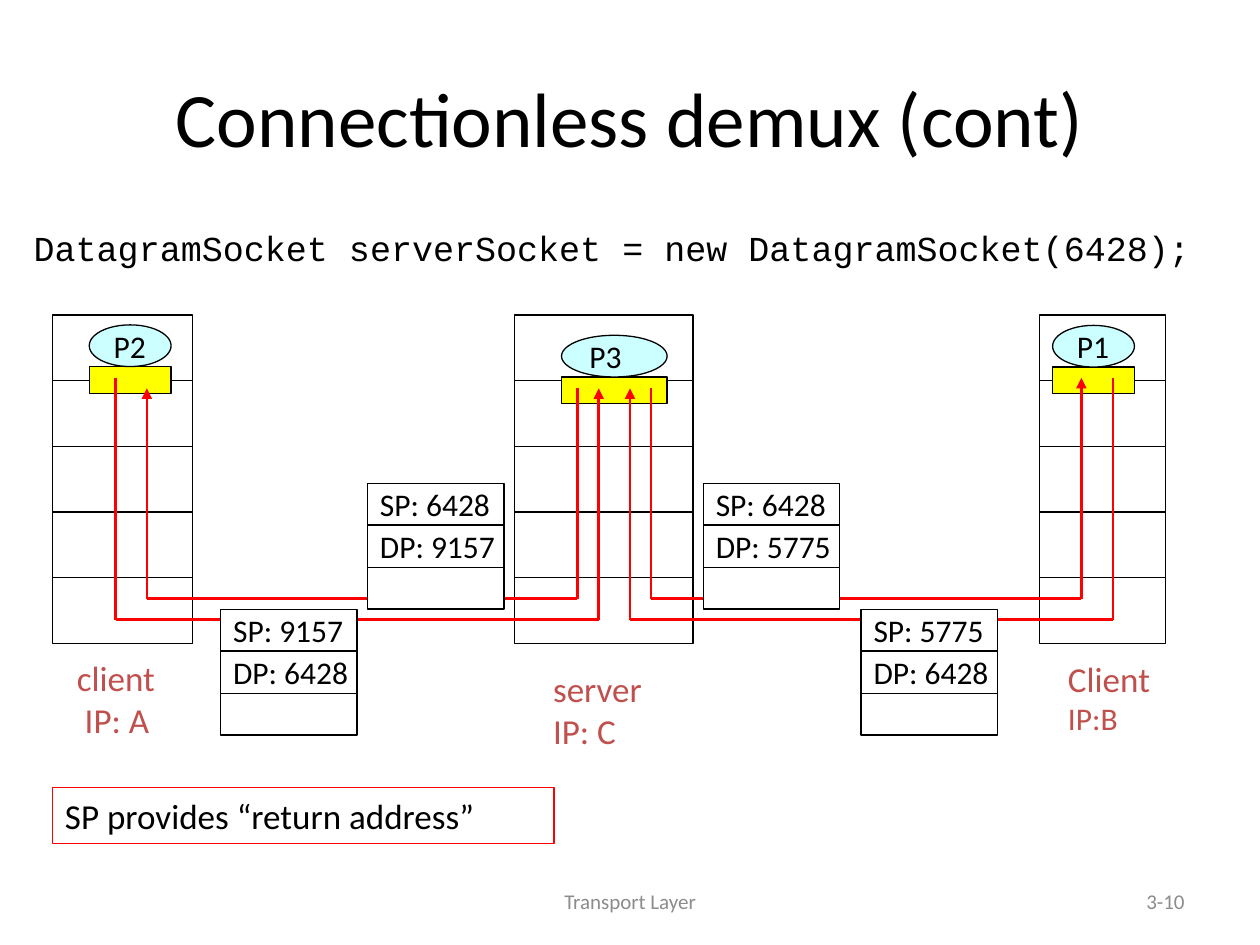
from dataclasses import dataclass
from itertools import pairwise

from lxml import etree
from pptx import Presentation
from pptx.dml.color import RGBColor
from pptx.enum.shapes import MSO_CONNECTOR, MSO_SHAPE
from pptx.enum.text import MSO_ANCHOR, PP_ALIGN
from pptx.oxml.ns import qn
from pptx.util import Cm, Pt

RECTANGLE = MSO_SHAPE.RECTANGLE
OVAL = MSO_SHAPE.OVAL
STRAIGHT = MSO_CONNECTOR.STRAIGHT
TOP = MSO_ANCHOR.TOP
MIDDLE = MSO_ANCHOR.MIDDLE
LEFT = PP_ALIGN.LEFT
CENTER = PP_ALIGN.CENTER
RIGHT = PP_ALIGN.RIGHT


@dataclass(frozen=True)
class Theme:
    font: str = "Calibri"
    code_font: str = "Courier New"
    ink: str = "000000"
    paper: str = "FFFFFF"
    process: str = "CCFFFF"
    socket: str = "FFFF00"
    route: str = "FF0000"
    label: str = "C0504D"
    muted: str = "8C8C8C"
    title_size: float = 44
    body_size: float = 20
    small_size: float = 18
    footer_size: float = 12
    outline: float = 0.75
    route_width: float = 1.5


THEME = Theme()


def rgb(value):
    return RGBColor.from_string(value)


def write(shape, lines, color=THEME.ink, font=THEME.font, align=LEFT, anchor=TOP):
    frame = shape.text_frame
    frame.word_wrap = True
    frame.vertical_anchor = anchor
    for index, (text, size) in enumerate(lines):
        paragraph = frame.paragraphs[0] if index == 0 else frame.add_paragraph()
        paragraph.alignment = align
        run = paragraph.add_run()
        run.text = text
        run.font.name = font
        run.font.size = Pt(size)
        run.font.color.rgb = rgb(color)
    return frame


def add_text(slide, box, lines, **style):
    return write(slide.shapes.add_textbox(*map(Cm, box)), lines, **style)


def add_outlined(slide, kind, box, fill=None, line=THEME.ink):
    shape = slide.shapes.add_shape(kind, *map(Cm, box))
    shape.shadow.inherit = False
    if fill:
        shape.fill.solid()
        shape.fill.fore_color.rgb = rgb(fill)
    else:
        shape.fill.background()
    shape.line.color.rgb = rgb(line)
    shape.line.width = Pt(THEME.outline)
    return shape


def write_compact(shape, text):
    frame = write(shape, [(text, THEME.small_size)], anchor=MIDDLE)
    frame.margin_right = 0


def add_host(slide, box, process, process_box, label, label_box):
    left, top, width, height = box
    layers = 5
    layer_height = height / layers
    for layer in range(layers):
        layer_box = (left, top + layer * layer_height, width, layer_height)
        add_outlined(slide, RECTANGLE, layer_box, THEME.paper)

    offset_x, offset_y, process_width = process_box
    oval_height, socket_height = 0.84, 0.54
    x, y = left + offset_x, top + offset_y
    socket_box = (x, y + oval_height, process_width, socket_height)
    add_outlined(slide, RECTANGLE, socket_box, THEME.socket)
    oval = add_outlined(slide, OVAL, (x, y, process_width, oval_height), THEME.process)
    write_compact(oval, process)

    label_x, label_y, label_width = label_box
    add_text(slide, (left + label_x, top + height + label_y, label_width, 1.95),
             label, color=THEME.label)


def add_route(slide, start, end, lane):
    (start_x, start_y), (end_x, end_y) = start, end
    points = [(start_x, start_y), (start_x, lane), (end_x, lane), (end_x, end_y)]
    for begin, finish in pairwise(points):
        connector = slide.shapes.add_connector(STRAIGHT, *map(Cm, begin + finish))
        connector.line.color.rgb = rgb(THEME.route)
        connector.line.width = Pt(THEME.route_width)
        properties = connector._element.spPr
        etree.SubElement(properties, qn("a:effectLst"))
        if finish == points[-1]:
            etree.SubElement(properties.find(qn("a:ln")), qn("a:tailEnd"), type="triangle")


def add_packet(slide, box, source_port, destination_port):
    left, top, width, height = box
    fields = (f"SP: {source_port}", f"DP: {destination_port}", "")
    field_height = height / len(fields)
    for row, field in enumerate(fields):
        field_box = (left, top + row * field_height, width, field_height)
        cell = add_outlined(slide, RECTANGLE, field_box, THEME.paper)
        if field:
            write_compact(cell, field)


def add_heading(slide, box):
    left, top, width, height = box
    add_text(slide, box, [("Connectionless demux (cont)", THEME.title_size)],
             align=CENTER, anchor=MIDDLE)
    code = "DatagramSocket serverSocket = new DatagramSocket(6428);"
    frame = add_text(slide, (left - 0.84, top + height + 0.51, width + 1.27, 1.7),
                     [(code, THEME.body_size)], font=THEME.code_font)
    frame.paragraphs[0].space_before = Pt(4)


def add_diagram(slide, box):
    left, top, width, height = box
    size = THEME.body_size
    add_host(slide, (left, top, 2.82, height), "P2", (0.74, 0.2, 1.65),
             [("client", size), (" IP: A", size)], (0.24, 0.14, 2.41))
    add_host(slide, (left + width - 2.54, top, 2.54, height), "P1", (0.26, 0.21, 1.65),
             [("Client", size), ("IP:B", THEME.small_size)], (0.32, 0.16, 2.41))
    add_host(slide, (left + 9.31, top, 3.6, height), "P3", (0.95, 0.41, 2.13),
             [("server", size), ("IP: C", size)], (0.53, 0.37, 2.67))

    reply_lane, request_lane = top + 5.72, top + 6.14
    client_y, server_y = top + 1.27, top + 1.48
    routes = [
        ((1.27, client_y), (11.01, server_y), request_lane),
        ((10.58, server_y), (1.9, server_y), reply_lane),
        ((21.38, client_y), (11.64, server_y), request_lane),
        ((12.06, server_y), (20.74, client_y), reply_lane),
    ]
    for (start_x, start_y), (end_x, end_y), lane in routes:
        add_route(slide, (left + start_x, start_y), (left + end_x, end_y), lane)

    reply_top, request_top = top + 3.39, top + 5.93
    packets = [
        (6.35, reply_top, 6428, 9157),
        (3.39, request_top, 9157, 6428),
        (13.12, reply_top, 6428, 5775),
        (16.3, request_top, 5775, 6428),
    ]
    for x, y, source_port, destination_port in packets:
        add_packet(slide, (left + x, y, 2.75, 2.54), source_port, destination_port)


def add_note(slide, box):
    note = add_outlined(slide, RECTANGLE, box, line=THEME.route)
    write(note, [("SP provides “return address”", THEME.body_size)], anchor=MIDDLE)


def add_footer(slide, box):
    left, top, width, height = box
    style = {"color": THEME.muted, "anchor": MIDDLE}
    add_text(slide, (left, top, 8.05, height),
             [("Transport Layer", THEME.footer_size)], align=CENTER, **style)
    add_text(slide, (left + width - 5.92, top, 5.92, height),
             [("3-10", THEME.footer_size)], align=RIGHT, **style)


def main():
    presentation = Presentation()
    presentation.slide_width = Cm(25.4)
    presentation.slide_height = Cm(19.05)
    slide = presentation.slides.add_slide(presentation.slide_layouts[6])
    add_heading(slide, (1.27, 0.76, 22.86, 3.18))
    add_diagram(slide, (1.06, 6.35, 22.44, 6.62))
    add_note(slide, (1.06, 15.88, 10.11, 1.12))
    add_footer(slide, (8.68, 17.66, 15.45, 1.01))
    presentation.save("out.pptx")


if __name__ == "__main__":
    main()
